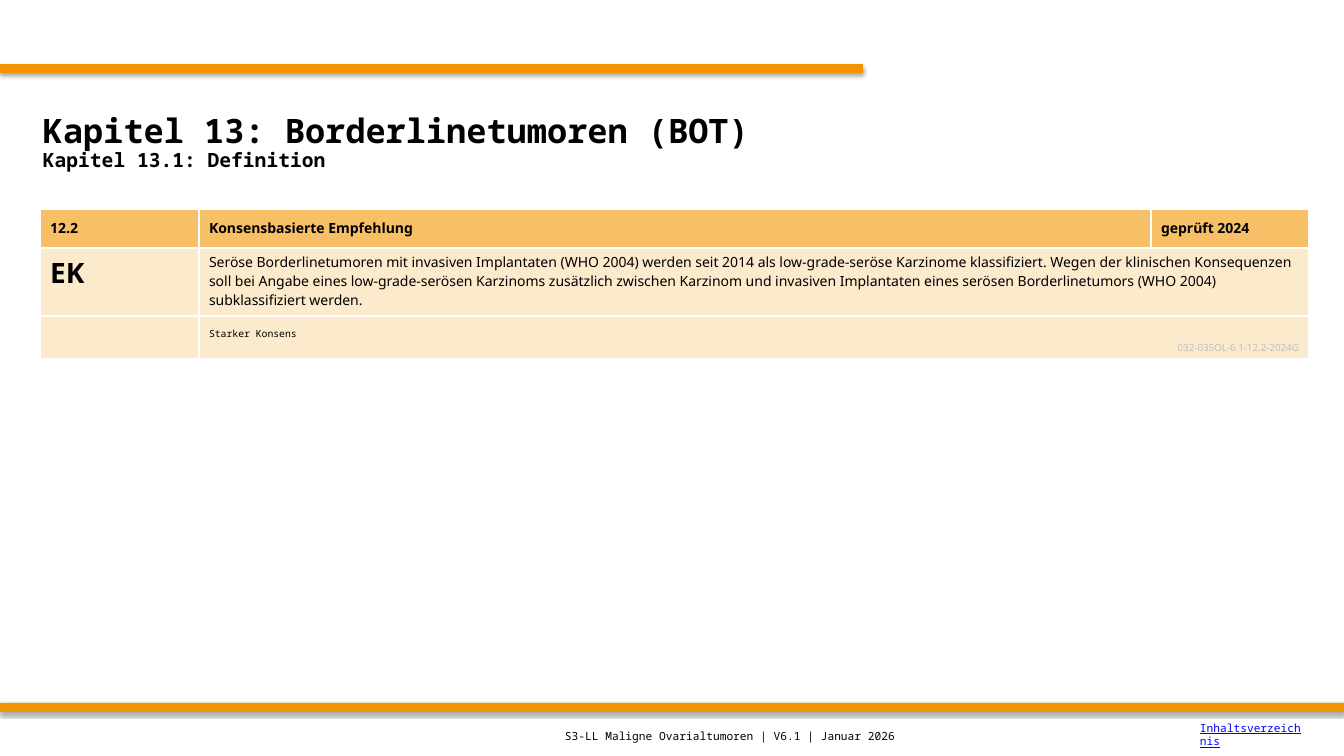
from lxml import etree
from pptx import Presentation
from pptx import util as u
from pptx.dml.color import RGBColor
from pptx.enum import shapes, text
from pptx.oxml import ns

SANS, MONO = "Noto Sans", "Noto Sans Mono"
BLACK, ORANGE, LINK = "000000", "F29400", "0000FF"
HEADER_FILL, BODY_FILL, CODE_GREY = "F7BF66", "FCEACC", "BFBFBF"
MIDDLE, BOTTOM = text.MSO_ANCHOR.MIDDLE, text.MSO_ANCHOR.BOTTOM


def px(n):
    return u.Emu(round(n * 914400 / 100.8))


def rgb(value):
    return RGBColor.from_string(value)


def write(p, content, size, font=SANS, color=BLACK, bold=False):
    p.text = content
    f = p.font
    f.name, f.size, f.bold = font, u.Pt(size), bold
    f.color.rgb = rgb(color)


def add_bar(s, top, width):
    """Orange bar from the left edge with a soft shadow below it."""
    sp = s.shapes.add_shape(shapes.MSO_SHAPE.RECTANGLE, 0, px(top), px(width), px(9))
    sp.fill.solid()
    sp.fill.fore_color.rgb = rgb(ORANGE)
    sp.line.fill.background()
    sp.shadow.inherit = False
    effects = sp._element.spPr.find(ns.qn("a:effectLst"))
    shadow = etree.SubElement(effects, ns.qn("a:outerShdw"), blurRad=str(u.Pt(3.1)),
                              dist=str(u.Pt(1.8)), dir="5400000", rotWithShape="0")
    color = etree.SubElement(shadow, ns.qn("a:srgbClr"), val=BLACK)
    etree.SubElement(color, ns.qn("a:alpha"), val="35000")


def add_text_box(s, left, top, width, height):
    tf = s.shapes.add_textbox(px(left), px(top), px(width), px(height)).text_frame
    tf.word_wrap = True
    tf.vertical_anchor = MIDDLE
    return tf


def add_title(s, title, subtitle):
    tf = add_text_box(s, 33, 84, 1277, 118)
    for p, content, size in ((tf.paragraphs[0], title, 24),
                             (tf.add_paragraph(), subtitle, 14)):
        write(p, content, size, MONO, bold=True)
        p.line_spacing = 0.9


def add_recommendation(s, header, grade, statement, consensus, code):
    widths, heights = (159, 952, 158), (39, 68, 43)
    table = s.shapes.add_table(3, 3, px(40), px(209), px(sum(widths)),
                               px(sum(heights))).table
    table.horz_banding = False
    for column, width in zip(table.columns, widths):
        column.width = px(width)
    for i, (row, height) in enumerate(zip(table.rows, heights)):
        row.height = px(height)
        for cell in row.cells:
            cell.fill.solid()
            cell.fill.fore_color.rgb = rgb(BODY_FILL if i else HEADER_FILL)
        if i:
            row.cells[1].merge(row.cells[2])

    for cell, label in zip(table.rows[0].cells, header):
        cell.vertical_anchor = MIDDLE
        write(cell.text_frame.paragraphs[0], label, 10, bold=True)
    write(table.cell(1, 0).text_frame.paragraphs[0], grade, 20, bold=True)
    write(table.cell(1, 1).text_frame.paragraphs[0], statement, 10)

    cell = table.cell(2, 1)
    cell.vertical_anchor = BOTTOM
    write(cell.text_frame.paragraphs[0], consensus, 7, MONO)
    p = cell.text_frame.add_paragraph()
    write(p, code, 7, color=CODE_GREY)
    p.alignment = text.PP_ALIGN.RIGHT


def add_footer(s, label, contents):
    write(add_text_box(s, 555, 717, 555, 39).paragraphs[0], label, 8, MONO)
    p = add_text_box(s, 1190, 715, 123, 39).paragraphs[0]
    write(p, contents, 8, MONO, LINK)
    p.font.underline = True


def main():
    prs = Presentation()
    prs.slide_width, prs.slide_height = px(1344), px(756)
    s = prs.slides.add_slide(prs.slide_layouts[6])
    add_bar(s, 64, 863)
    add_bar(s, 703, 1344)
    add_title(s, "Kapitel 13: Borderlinetumoren (BOT)", "Kapitel 13.1: Definition")
    add_recommendation(
        s,
        ("12.2", "Konsensbasierte Empfehlung", "geprüft 2024"),
        "EK",
        "Seröse Borderlinetumoren mit invasiven Implantaten (WHO 2004) werden seit 2014 "
        "als low-grade-seröse Karzinome klassifiziert. Wegen der klinischen Konsequenzen "
        "soll bei Angabe eines low-grade-serösen Karzinoms zusätzlich zwischen Karzinom "
        "und invasiven Implantaten eines serösen Borderlinetumors (WHO 2004) "
        "subklassifiziert werden.",
        "Starker Konsens",
        "032-035OL-6.1-12.2-2024G",
    )
    add_footer(s, "S3-LL Maligne Ovarialtumoren | V6.1 | Januar 2026", "Inhaltsverzeichnis")
    prs.save("out.pptx")


if __name__ == "__main__":
    main()
